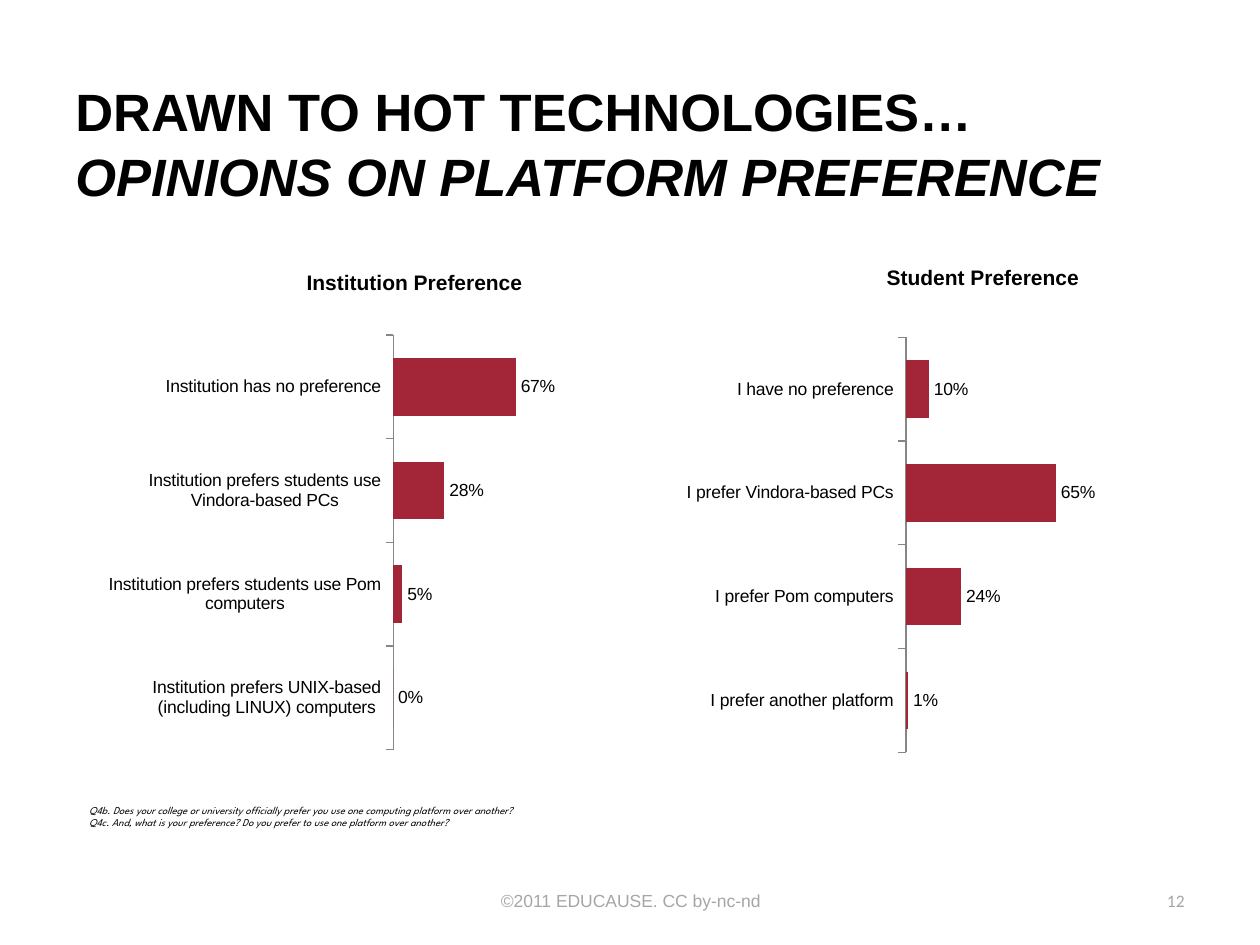
from lxml.etree import SubElement
from pptx import Presentation
from pptx.chart.data import CategoryChartData
from pptx.dml.color import RGBColor
from pptx.enum.chart import XL_CHART_TYPE, XL_LABEL_POSITION, XL_TICK_LABEL_POSITION, XL_TICK_MARK
from pptx.enum.text import MSO_ANCHOR, PP_ALIGN
from pptx.oxml.ns import qn
from pptx.util import Inches, Pt

COLORS = {"text": "000000", "muted": "A6A6A6", "bar": "A32638", "axis": "868686"}
TITLE = {"name": "Arial", "size": Pt(30), "bold": True}
HEADING = {"name": "Arial", "size": Pt(12), "bold": True}
LABEL = {"name": "Arial", "size": Pt(10)}
NUMBER = {"name": "Calibri", "size": Pt(10)}
NOTE = {"name": "League Spartan", "size": Pt(6), "italic": True}

CHART_SIZE = (3.82, 3.43)
INSTITUTION = {
    "Institution has no preference": 0.67,
    "Institution prefers students use Vindora-based PCs": 0.28,
    "Institution prefers students use Pom computers": 0.05,
    "Institution prefers UNIX-based (including LINUX) computers": 0,
}
STUDENT = {
    "I have no preference": 0.1,
    "I prefer Vindora-based PCs": 0.65,
    "I prefer Pom computers": 0.24,
    "I prefer another platform": 0.01,
}


def set_font(font, values, color="text"):
    """Apply format values and a palette colour to a font."""
    for name, value in values.items():
        setattr(font, name, value)
    font.color.rgb = RGBColor.from_string(COLORS[color])


def add_text(slide, box, lines, values, color="text", align=PP_ALIGN.LEFT, anchor=MSO_ANCHOR.TOP):
    """Add a wrapped text box with one paragraph per line and return its frame."""
    frame = slide.shapes.add_textbox(*map(Inches, box)).text_frame
    frame.word_wrap = True
    frame.vertical_anchor = anchor
    for index, line in enumerate(lines):
        paragraph = frame.paragraphs[0] if index == 0 else frame.add_paragraph()
        paragraph.alignment = align
        run = paragraph.add_run()
        run.text = line
        set_font(run.font, values, color)
    return frame


def add_title(slide, box):
    """Add the two-line title with its second line in italics."""
    frame = add_text(slide, box, ["DRAWN TO HOT TECHNOLOGIES…"], TITLE, anchor=MSO_ANCHOR.MIDDLE)
    paragraph = frame.paragraphs[0]
    paragraph.line_spacing = 1.04
    paragraph.add_line_break()
    run = paragraph.add_run()
    run.text = "OPINIONS ON PLATFORM PREFERENCE"
    set_font(run.font, TITLE | {"italic": True})


def set_plot_area(chart, x, y, width, height):
    """Fix the inner plot area as fractions of the chart."""
    plot_area = chart.plots[0]._element.getparent()
    layout = plot_area.find(qn("c:layout"))
    if layout is None:
        layout = SubElement(plot_area, qn("c:layout"))
        plot_area.insert(0, layout)
    manual = SubElement(layout, qn("c:manualLayout"))
    settings = {"layoutTarget": "inner", "xMode": "edge", "yMode": "edge",
                "x": x, "y": y, "w": width, "h": height}
    for name, value in settings.items():
        SubElement(manual, qn(f"c:{name}")).set("val", str(value))


def add_preference_chart(slide, left, top, preferences, plot_left, plot_width):
    """Add a bar chart of preferences at the given corner."""
    data = CategoryChartData(number_format="0%")
    data.categories = list(preferences)
    data.add_series("Series 1", list(preferences.values()))
    chart = slide.shapes.add_chart(
        XL_CHART_TYPE.BAR_CLUSTERED, *map(Inches, (left, top, *CHART_SIZE)), data).chart
    chart.has_legend = False
    chart.has_title = False
    set_font(chart.font, {"name": "Calibri", "size": Pt(18)})
    set_plot_area(chart, plot_left, 0.02, plot_width, 0.96)

    category_axis = chart.category_axis
    axis_values = {"reverse_order": True, "has_major_gridlines": False,
                   "major_tick_mark": XL_TICK_MARK.OUTSIDE, "minor_tick_mark": XL_TICK_MARK.NONE,
                   "tick_label_position": XL_TICK_LABEL_POSITION.NEXT_TO_AXIS}
    for name, value in axis_values.items():
        setattr(category_axis, name, value)
    category_axis.format.line.color.rgb = RGBColor.from_string(COLORS["axis"])
    category_axis.format.line.width = Pt(0.75)
    set_font(category_axis.tick_labels.font, LABEL)

    value_axis = chart.value_axis
    scale = {"minimum_scale": 0, "maximum_scale": 1, "has_major_gridlines": False, "visible": False}
    for name, value in scale.items():
        setattr(value_axis, name, value)

    plot = chart.plots[0]
    plot.gap_width = 80
    plot.vary_by_categories = False
    fill = plot.series[0].format.fill
    fill.solid()
    fill.fore_color.rgb = RGBColor.from_string(COLORS["bar"])
    labels = plot.series[0].data_labels
    label_values = {"show_value": True, "number_format": "0%", "number_format_is_linked": False,
                    "position": XL_LABEL_POSITION.OUTSIDE_END}
    for name, value in label_values.items():
        setattr(labels, name, value)
    set_font(labels.font, LABEL)


def add_footer(slide, top, height):
    """Add the copyright line and the slide number."""
    add_text(slide, (3.42, top, 3.17, height), ["©2011 EDUCAUSE. CC by-nc-nd"], LABEL,
             "muted", PP_ALIGN.CENTER, MSO_ANCHOR.MIDDLE)
    add_text(slide, (7.17, top, 2.33, height), ["12"], NUMBER,
             "muted", PP_ALIGN.RIGHT, MSO_ANCHOR.MIDDLE)


def main():
    """Build the platform preference slide and save it."""
    presentation = Presentation()
    presentation.slide_width, presentation.slide_height = Inches(10), Inches(7.5)
    slide = presentation.slides.add_slide(presentation.slide_layouts[6])
    add_title(slide, (0.5, 0.5, 9.17, 1.25))
    add_text(slide, (1.83, 2.09, 2.92, 0.3), ["Institution Preference"], HEADING, align=PP_ALIGN.CENTER)
    add_text(slide, (6.34, 2.05, 2.92, 0.61), ["Student Preference"], HEADING, align=PP_ALIGN.CENTER)
    add_preference_chart(slide, 0.83, 2.59, INSTITUTION, 0.6, 0.38)
    add_preference_chart(slide, 5.28, 2.61, STUDENT, 0.5, 0.48)
    add_text(slide, (0.61, 6.33, 8.83, 0.3), [
        "Q4b. Does your college or university officially prefer you use one computing platform over another?",
        "Q4c. And, what is your preference? Do you prefer to use one platform over another?",
    ], NOTE)
    add_footer(slide, 6.95, 0.4)
    presentation.save("out.pptx")


if __name__ == "__main__":
    main()
